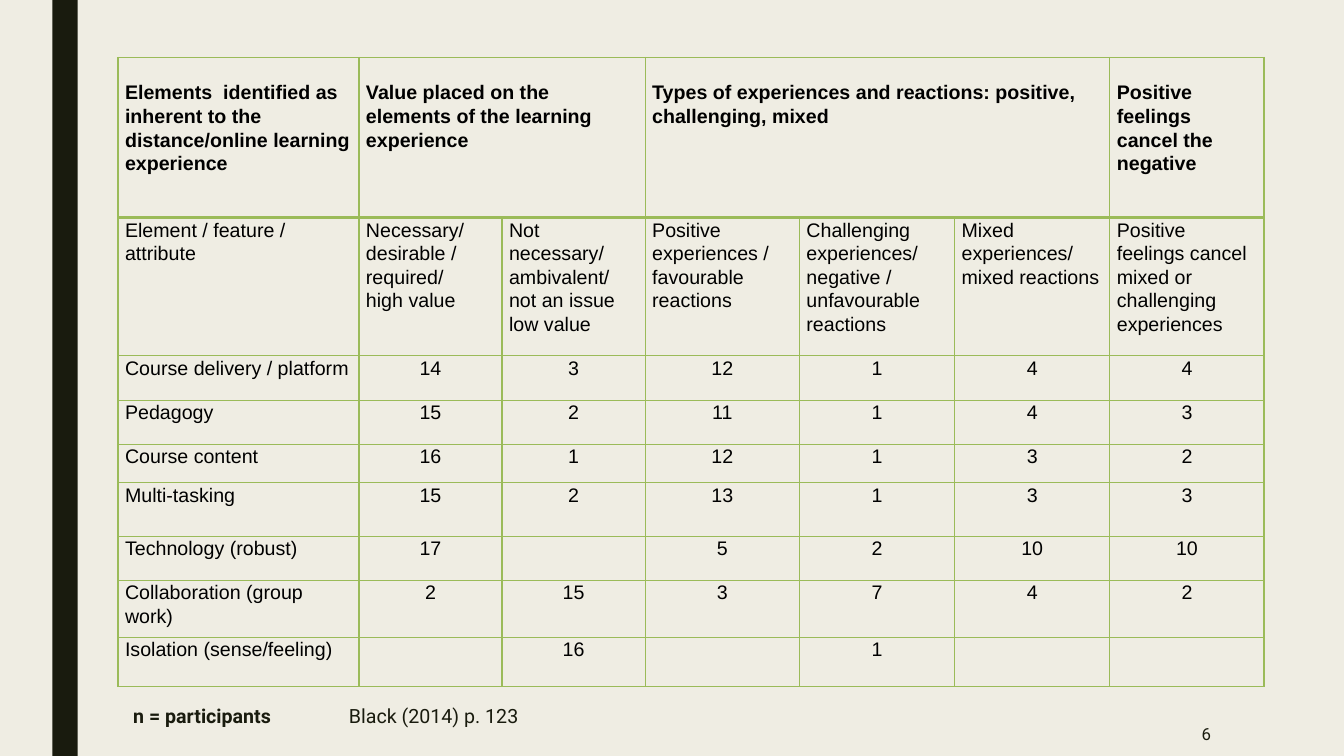
from dataclasses import dataclass

from lxml.etree import SubElement
from pptx import Presentation
from pptx.dml.color import RGBColor
from pptx.enum.shapes import MSO_SHAPE as Shape
from pptx.enum.text import MSO_ANCHOR as Anchor, PP_ALIGN as Align
from pptx.oxml.ns import qn
from pptx.slide import Slide
from pptx.table import Table, _Cell as Cell
from pptx.text.text import TextFrame, _Paragraph as Paragraph
from pptx.util import Inches, Length, Pt

COLORS = {"background": "EFEDE3", "dark": "191B0E", "text": "000000", "border": "9BBB59"}
SLIDE_WIDTH, SLIDE_HEIGHT = Inches(13.33), Inches(7.5)
THIN, THICK = Pt(1), Pt(2.25)


# Lengths are percentages of the slide's width and height
def across(percent: float) -> Length:
    return Length(round(SLIDE_WIDTH * percent / 100))


def down(percent: float) -> Length:
    return Length(round(SLIDE_HEIGHT * percent / 100))


@dataclass(frozen=True)
class Box:
    left: float
    top: float
    width: float
    height: float

    def place(self) -> tuple[Length, Length, Length, Length]:
        return across(self.left), down(self.top), across(self.width), down(self.height)


@dataclass(frozen=True)
class Heading:
    column: int
    span: int
    text: str


@dataclass(frozen=True)
class ElementRow:
    name: str
    counts: tuple[str, ...]


BAR = Box(3.9, 0, 1.88, 100)
NOTE = Box(8.78, 91.73, 51.54, 5.87)
NUMBER = Box(77.72, 94.13, 13.13, 5.87)
COLUMNS = (17.93, 10.65, 10.65, 11.48, 11.55, 11.55, 11.48)
ROWS = (21.2, 18.27, 5.87, 5.87, 5.07, 7.07, 5.87, 7.47, 6.53)
TABLE = Box(8.78, 7.6, sum(COLUMNS), sum(ROWS))

HEADINGS = (
    Heading(0, 1, "Elements  identified as inherent to the distance/online learning experience"),
    Heading(1, 2, "Value placed on the elements of the learning experience"),
    Heading(3, 3, "Types of experiences and reactions: positive, challenging, mixed"),
    Heading(6, 1, "Positive feelings cancel the negative"),
)
SUBHEADINGS = (
    "Element / feature / attribute",
    "Necessary/\ndesirable /\nrequired/\nhigh value",
    "Not necessary/\nambivalent/ not an issue\nlow value",
    "Positive experiences / favourable\nreactions",
    "Challenging\nexperiences/\nnegative / unfavourable\nreactions",
    "Mixed\nexperiences/\nmixed reactions",
    "Positive\nfeelings cancel mixed or challenging experiences",
)
ELEMENTS = (
    ElementRow("Course delivery / platform", ("14", "3", "12", "1", "4", "4")),
    ElementRow("Pedagogy", ("15", "2", "11", "1", "4", "3")),
    ElementRow("Course content", ("16", "1", "12", "1", "3", "2")),
    ElementRow("Multi-tasking", ("15", "2", "13", "1", "3", "3")),
    ElementRow("Technology (robust)", ("17", "", "5", "2", "10", "10")),
    ElementRow("Collaboration (group work)", ("2", "15", "3", "7", "4", "2")),
    ElementRow("Isolation (sense/feeling)", ("", "16", "", "1", "", "")),
)


def format_runs(paragraph: Paragraph, font: str, size: int, color: str, bold: bool = False) -> None:
    for run in paragraph.runs:
        run.font.name, run.font.size, run.font.bold = font, Pt(size), bold
        run.font.color.rgb = RGBColor.from_string(COLORS[color])


def set_borders(cell: Cell, top: Length, bottom: Length) -> None:
    properties = cell._tc.get_or_add_tcPr()
    sides = {"lnL": THIN, "lnR": THIN, "lnT": top, "lnB": bottom}
    for index, (side, width) in enumerate(sides.items()):
        line = properties.makeelement(qn(f"a:{side}"), {"w": str(width)})
        SubElement(SubElement(line, qn("a:solidFill")), qn("a:srgbClr"), val=COLORS["border"])
        properties.insert(index, line)


def fill_cell(cell: Cell, text: str, bold: bool = False, align: Align = Align.LEFT) -> None:
    cell.text_frame.text = text
    for paragraph in cell.text_frame.paragraphs:
        paragraph.alignment, paragraph.line_spacing = align, 1.07
        format_runs(paragraph, "Arial", 14, "text", bold)


def add_table(slide: Slide) -> Table:
    table = slide.shapes.add_table(len(ROWS), len(COLUMNS), *TABLE.place()).table
    table.first_row = table.horz_banding = False
    for column, width in zip(table.columns, COLUMNS):
        column.width = across(width)
    for index, (row, height) in enumerate(zip(table.rows, ROWS)):
        row.height = down(height)
        for cell in row.cells:
            cell.fill.background()
            cell.margin_left = cell.margin_right = Inches(0.07)
            cell.margin_top = Inches(0.23) if index == 0 else 0
            cell.margin_bottom = 0
            set_borders(cell, THICK if index == 1 else THIN, THICK if index == 0 else THIN)
    return table


def fill_table(table: Table) -> None:
    for heading in HEADINGS:
        cell = table.cell(0, heading.column)
        if heading.span > 1:
            cell.merge(table.cell(0, heading.column + heading.span - 1))
        fill_cell(cell, heading.text, bold=True)
    for column, text in enumerate(SUBHEADINGS):
        fill_cell(table.cell(1, column), text)
    for row, element in enumerate(ELEMENTS, start=2):
        fill_cell(table.cell(row, 0), element.name)
        for column, count in enumerate(element.counts, start=1):
            fill_cell(table.cell(row, column), count, align=Align.CENTER)


def add_text(slide: Slide, box: Box, text: str, size: int, align: Align) -> TextFrame:
    frame = slide.shapes.add_textbox(*box.place()).text_frame
    frame.word_wrap, frame.vertical_anchor = True, Anchor.MIDDLE
    frame.text = text
    frame.paragraphs[0].alignment = align
    format_runs(frame.paragraphs[0], "Roboto", size, "dark")
    return frame


def add_note(slide: Slide) -> None:
    frame = add_text(slide, NOTE, "n = participants", 14, Align.LEFT)
    frame.margin_left = Inches(0.15)
    paragraph = frame.paragraphs[0]
    paragraph.add_run().text = "\tBlack (2014) p. 123"
    format_runs(paragraph, "Roboto", 14, "dark")
    paragraph.runs[0].font.bold = True
    # The tab stop sets the gap before the citation
    tabs = SubElement(paragraph._p.get_or_add_pPr(), qn("a:tabLst"))
    SubElement(tabs, qn("a:tab"), pos=str(across(16.05)), algn="l")


def main() -> None:
    presentation = Presentation()
    presentation.slide_width, presentation.slide_height = SLIDE_WIDTH, SLIDE_HEIGHT
    slide = presentation.slides.add_slide(presentation.slide_layouts[6])
    slide.background.fill.solid()
    slide.background.fill.fore_color.rgb = RGBColor.from_string(COLORS["background"])

    # Side bar
    bar = slide.shapes.add_shape(Shape.RECTANGLE, *BAR.place())
    bar.shadow.inherit = False
    bar.fill.solid()
    bar.fill.fore_color.rgb = RGBColor.from_string(COLORS["dark"])
    bar.line.fill.background()

    # Note, slide number and table
    add_note(slide)
    add_text(slide, NUMBER, "6", 12, Align.RIGHT)
    fill_table(add_table(slide))
    presentation.save("out.pptx")


if __name__ == "__main__":
    main()
